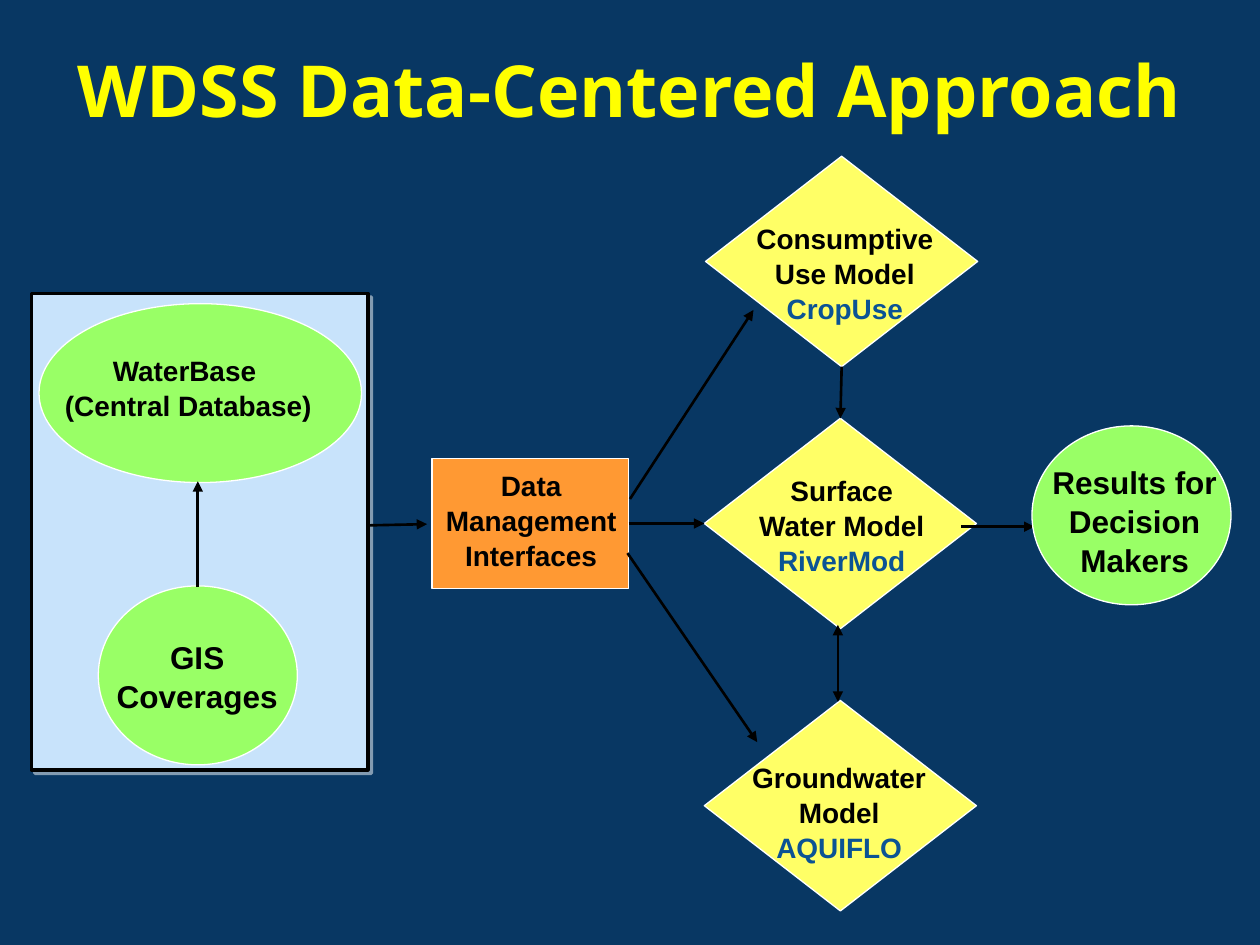
from lxml import etree
from pptx import Presentation
from pptx.dml.color import RGBColor
from pptx.enum.shapes import MSO_CONNECTOR, MSO_SHAPE as SHAPE
from pptx.enum.text import MSO_ANCHOR as ANCHOR, PP_ALIGN
from pptx.oxml import parse_xml
from pptx.oxml.ns import nsdecls, qn
from pptx.util import Inches, Pt

NAVY, YELLOW, BLACK, WHITE = "083763", "FFFF00", "000000", "FFFFFF"
ORANGE, LEMON, GREEN = "FF9933", "FFFF66", "99FF66"
PALE_BLUE, MODEL_BLUE = "C8E3FB", "0B5394"
TOP, LEFT, BOTTOM, RIGHT = range(4)


def rgb(value):
    return RGBColor.from_string(value)


def add_box(shapes, kind, x, y, w, h, fill, line=WHITE, weight=0.75):
    sp = shapes.add_shape(kind, Inches(x), Inches(y), Inches(w), Inches(h))
    sp.shadow.inherit = False
    sp.fill.solid()
    sp.fill.fore_color.rgb = rgb(fill)
    sp.line.color.rgb = rgb(line)
    sp.line.width = Pt(weight)
    return sp


def add_text(shapes, x, y, w, h, lines, size=16, color=BLACK, font="Arial",
             spacing=1.04, anchor=ANCHOR.TOP):
    """Centred bold text, one paragraph for each line; returns the last one."""
    tf = shapes.add_textbox(Inches(x), Inches(y), Inches(w), Inches(h)).text_frame
    tf.word_wrap = True
    tf.vertical_anchor = anchor
    for i, line in enumerate(lines):
        p = tf.add_paragraph() if i else tf.paragraphs[0]
        p.text = line
        p.alignment = PP_ALIGN.CENTER
        p.line_spacing = spacing
        p.font.size = Pt(size)
        p.font.bold = True
        p.font.name = font
        p.font.color.rgb = rgb(color)
    return p


def add_arrow(shapes, x1, y1, x2, y2, both=False):
    cxn = shapes.add_connector(MSO_CONNECTOR.STRAIGHT, Inches(x1), Inches(y1),
                               Inches(x2), Inches(y2))
    cxn.line.color.rgb = rgb(BLACK)
    cxn.line.width = Pt(1.5)
    ln = cxn.line._get_or_add_ln()
    for end in ("headEnd", "tailEnd") if both else ("tailEnd",):
        etree.SubElement(ln, qn(f"a:{end}"), type="triangle")
    etree.SubElement(cxn._element.spPr, qn("a:effectLst"))
    return cxn


def join(shapes, start, start_side, end, end_side):
    cxn = add_arrow(shapes, 0, 0, 1, 1)
    cxn.begin_connect(start, start_side)
    cxn.end_connect(end, end_side)


def add_shadow(sp):
    """Half-transparent white shadow, down and to the right."""
    spPr = sp._element.spPr
    spPr.remove(spPr.find(qn("a:effectLst")))
    spPr.append(parse_xml(
        f'<a:effectLst {nsdecls("a")}><a:outerShdw dist="35560" dir="2700000">'
        f'<a:srgbClr val="{WHITE}"><a:alpha val="50000"/></a:srgbClr>'
        '</a:outerShdw></a:effectLst>'))


def database_panel(shapes, x, y, w, h):
    group = shapes.add_group_shape().shapes
    panel = add_box(group, SHAPE.RECTANGLE, x, y, w, h, PALE_BLUE, BLACK, 2)
    add_shadow(panel)
    add_box(group, SHAPE.OVAL, x + 0.53, y + 2.32, 1.58, 1.42, GREEN)
    add_box(group, SHAPE.OVAL, x + 0.06, y + 0.08, 2.56, 1.42, GREEN)
    add_text(group, x + 0.12, y + 0.42, 2.25, 0.64,
             ["WaterBase ", "(Central Database)"])
    add_arrow(group, x + 1.32, y + 2.33, x + 1.32, y + 1.49)
    add_text(group, x + 0.48, y + 2.67, 1.67, 0.7, ["GIS Coverages"], 18)


def interfaces_box(shapes, x, y, w, h):
    sp = add_box(shapes, SHAPE.RECTANGLE, x, y, w, h, ORANGE)
    add_text(shapes, x - 0.09, y + 0.02, w + 0.19, 0.9,
             ["Data Management Interfaces"])
    return sp


def model_diamond(shapes, x, y, label, model, text_dx, text_dy, text_w):
    sp = add_box(shapes, SHAPE.DIAMOND, x, y, 2.16, 1.67, LEMON)
    p = add_text(shapes, x + text_dx, y + text_dy, text_w, 0.91, [label])
    p.add_line_break()
    r = p.add_run()
    r.text = model
    r.font.color.rgb = rgb(MODEL_BLUE)
    return sp


def results_circle(shapes, x, y, w, h):
    add_box(shapes, SHAPE.OVAL, x, y, w, h, GREEN)
    add_text(shapes, x - 0.02, y + 0.23, w + 0.09, 1.01,
             ["Results for Decision Makers"], 18)


def main():
    prs = Presentation()
    prs.slide_width, prs.slide_height = Inches(10), Inches(7.5)
    s = prs.slides.add_slide(prs.slide_layouts[6])
    s.background.fill.solid()
    s.background.fill.fore_color.rgb = rgb(NAVY)
    shapes = s.shapes

    # Title
    add_text(shapes, 0.5, 0.08, 9, 1.25, ["WDSS Data-Centered Approach"], 41,
             YELLOW, "Open Sans", 1, ANCHOR.MIDDLE)

    # Data sources and interfaces
    database_panel(shapes, 0.25, 2.33, 2.67, 3.78)
    interfaces = interfaces_box(shapes, 3.43, 3.64, 1.56, 1.03)
    add_arrow(shapes, 2.92, 4.17, 3.39, 4.16)

    # Models
    consumptive = model_diamond(shapes, 5.6, 1.24, "Consumptive Use Model",
                                "CropUse", 0.23, 0.46, 1.75)
    surface = model_diamond(shapes, 5.59, 3.32, "Surface Water Model",
                            "RiverMod", 0.3, 0.38, 1.58)
    model_diamond(shapes, 5.59, 5.56, "Groundwater Model",
                  "AQUIFLO", 0.14, 0.42, 1.86)

    # Flow between interfaces and models
    add_arrow(shapes, 5, 3.96, 5.98, 2.46)
    join(shapes, interfaces, RIGHT, surface, LEFT)
    add_arrow(shapes, 4.98, 4.39, 6.01, 5.89)
    join(shapes, consumptive, BOTTOM, surface, TOP)
    add_arrow(shapes, 6.65, 4.96, 6.65, 5.57, both=True)

    # Results
    add_arrow(shapes, 7.63, 4.18, 8.21, 4.18)
    results_circle(shapes, 8.19, 3.38, 1.58, 1.42)

    prs.save("out.pptx")


if __name__ == "__main__":
    main()
